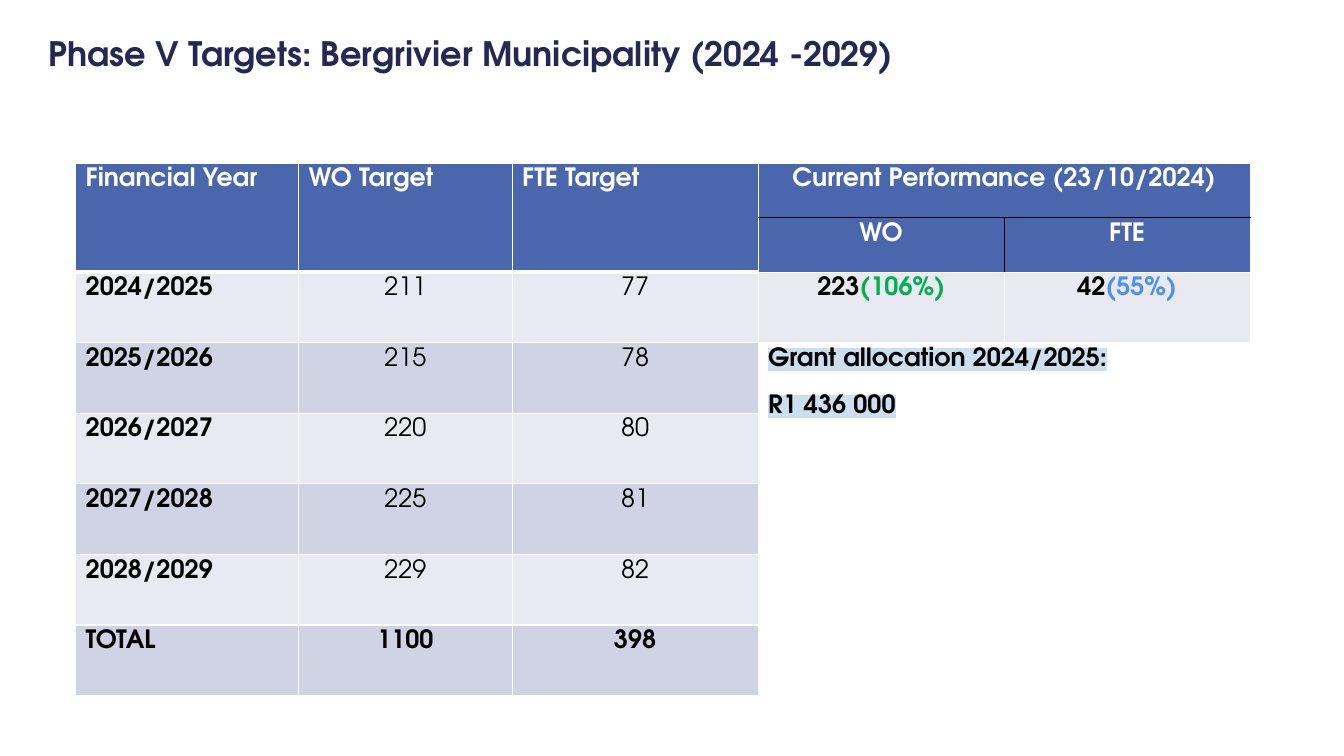
from lxml import etree
from pptx import Presentation
from pptx.dml.color import RGBColor
from pptx.enum import text as t
from pptx.oxml import ns
from pptx.util import Inches, Pt

FONT = "TeX Gyre Adventor"
COLORS = {
    "title": "242852", "header": "4A66AC", "light": "E9EAF1", "dark": "D0D3E3",
    "white": "FFFFFF", "black": "000000", "green": "00B050", "blue": "4E90F2",
    "highlight": "CBDFEF",
}
COLUMN_WIDTHS = [2.21, 2.12, 2.44, 2.44, 2.44]
ROW_HEIGHTS = [0.54] * 2 + [0.7] * 6
TARGETS = [
    ("2024/2025", "211", "77"),
    ("2025/2026", "215", "78"),
    ("2026/2027", "220", "80"),
    ("2027/2028", "225", "81"),
    ("2028/2029", "229", "82"),
    ("TOTAL", "1100", "398"),
]


def add_text(paragraph, content, size=18, color="black", bold=True, highlight=None):
    """Append a formatted run to a paragraph."""
    run = paragraph.add_run()
    run.text = content
    run.font.size = Pt(size)
    run.font.bold = bold
    run.font.color.rgb = RGBColor.from_string(COLORS[color])
    run.font.name = FONT
    if highlight:
        mark = etree.Element(ns.qn("a:highlight"))
        etree.SubElement(mark, ns.qn("a:srgbClr"), val=COLORS[highlight])
        run._r.get_or_add_rPr().find(ns.qn("a:solidFill")).addnext(mark)


def add_title(slide, content):
    """Place the slide title."""
    title = slide.shapes.add_textbox(Inches(0.4), Inches(0.22), Inches(12.54), Inches(0.61))
    frame = title.text_frame
    frame.word_wrap = True
    frame.vertical_anchor = t.MSO_ANCHOR.MIDDLE
    frame.margin_left = frame.margin_right = Inches(0.08)
    frame.margin_top = frame.margin_bottom = Inches(0.08)
    add_text(frame.paragraphs[0], content, size=24, color="title")


def style_cell(cell, fill, **edges):
    """Set the fill and the four borders of a cell, white and thin by default."""
    properties = cell._tc.get_or_add_tcPr()
    for side in "LRTB":
        color, width = edges.get(side, ("white", 1))
        line = etree.SubElement(properties, ns.qn(f"a:ln{side}"), w=str(Pt(width)))
        solid = etree.SubElement(line, ns.qn("a:solidFill"))
        etree.SubElement(solid, ns.qn("a:srgbClr"), val=COLORS[color])
    cell.fill.solid()
    cell.fill.fore_color.rgb = RGBColor.from_string(COLORS[fill])
    cell.margin_top = cell.margin_bottom = Inches(0.05)


def fill_cell(cell, *runs, centered=True):
    """Write (text, format) runs in the first paragraph of a cell."""
    paragraph = cell.text_frame.paragraphs[0]
    if centered:
        paragraph.alignment = t.PP_ALIGN.CENTER
    for content, style in runs:
        add_text(paragraph, content, **style)


def style_grid(table):
    """Apply fills and borders to every cell of the table."""
    black = ("black", 1)
    header_edges = {(0, 3): {"B": black}, (0, 4): {"B": black},
                    (1, 3): {"T": black, "R": black}, (1, 4): {"T": black, "L": black}}
    for row in range(len(ROW_HEIGHTS)):
        for column in range(len(COLUMN_WIDTHS)):
            edges = header_edges.get((row, column), {})
            if row < 2:
                fill = "header"
                if column < 3:
                    edges = {"B": ("white", 3)}
            elif row > 2 and column > 2:
                fill = "white"
            else:
                fill = "dark" if row % 2 else "light"
            style_cell(table.cell(row, column), fill, **edges)


def write_headers(table):
    """Merge and label the header cells."""
    white = {"color": "white"}
    for column, label in enumerate(["Financial Year", "WO Target", "FTE Target"]):
        table.cell(0, column).merge(table.cell(1, column))
        fill_cell(table.cell(0, column), (label, white), centered=False)
    table.cell(0, 3).merge(table.cell(0, 4))
    fill_cell(table.cell(0, 3), ("Current Performance (23/10/2024)", white))
    for column, label in enumerate(["WO", "FTE"], start=3):
        fill_cell(table.cell(1, column), (label, white))


def write_targets(table):
    """Write the yearly targets and their total."""
    for row, (year, *values) in enumerate(TARGETS, start=2):
        fill_cell(table.cell(row, 0), (year, {}), centered=False)
        for column, value in enumerate(values, start=1):
            fill_cell(table.cell(row, column), (value, {"bold": year == "TOTAL"}))


def write_performance(table):
    """Write the current performance and the grant allocation."""
    fill_cell(table.cell(2, 3), ("223", {}), ("(106%)", {"color": "green"}))
    fill_cell(table.cell(2, 4), ("42", {}), ("(55%)", {"color": "blue"}))
    grant = table.cell(3, 3)
    grant.merge(table.cell(7, 4))
    marked = {"highlight": "highlight"}
    fill_cell(grant, ("Grant allocation 2024/2025:", marked), centered=False)
    amount = grant.text_frame.add_paragraph()
    amount.space_before = Pt(17)
    add_text(amount, "R1 436 000", **marked)


def add_targets_table(slide):
    """Add the table of targets and performance."""
    table = slide.shapes.add_table(
        len(ROW_HEIGHTS), len(COLUMN_WIDTHS), Inches(0.75), Inches(1.62),
        Inches(sum(COLUMN_WIDTHS)), Inches(sum(ROW_HEIGHTS))).table
    for column, width in zip(table.columns, COLUMN_WIDTHS):
        column.width = Inches(width)
    for row, height in zip(table.rows, ROW_HEIGHTS):
        row.height = Inches(height)
    style_grid(table)
    write_headers(table)
    write_targets(table)
    write_performance(table)


def main():
    """Build and save the slide."""
    presentation = Presentation()
    presentation.slide_width = Inches(13.33)
    presentation.slide_height = Inches(7.5)
    slide = presentation.slides.add_slide(presentation.slide_layouts[6])
    add_title(slide, "Phase V Targets: Bergrivier Municipality (2024 -2029)")
    add_targets_table(slide)
    presentation.save("out.pptx")


if __name__ == "__main__":
    main()
